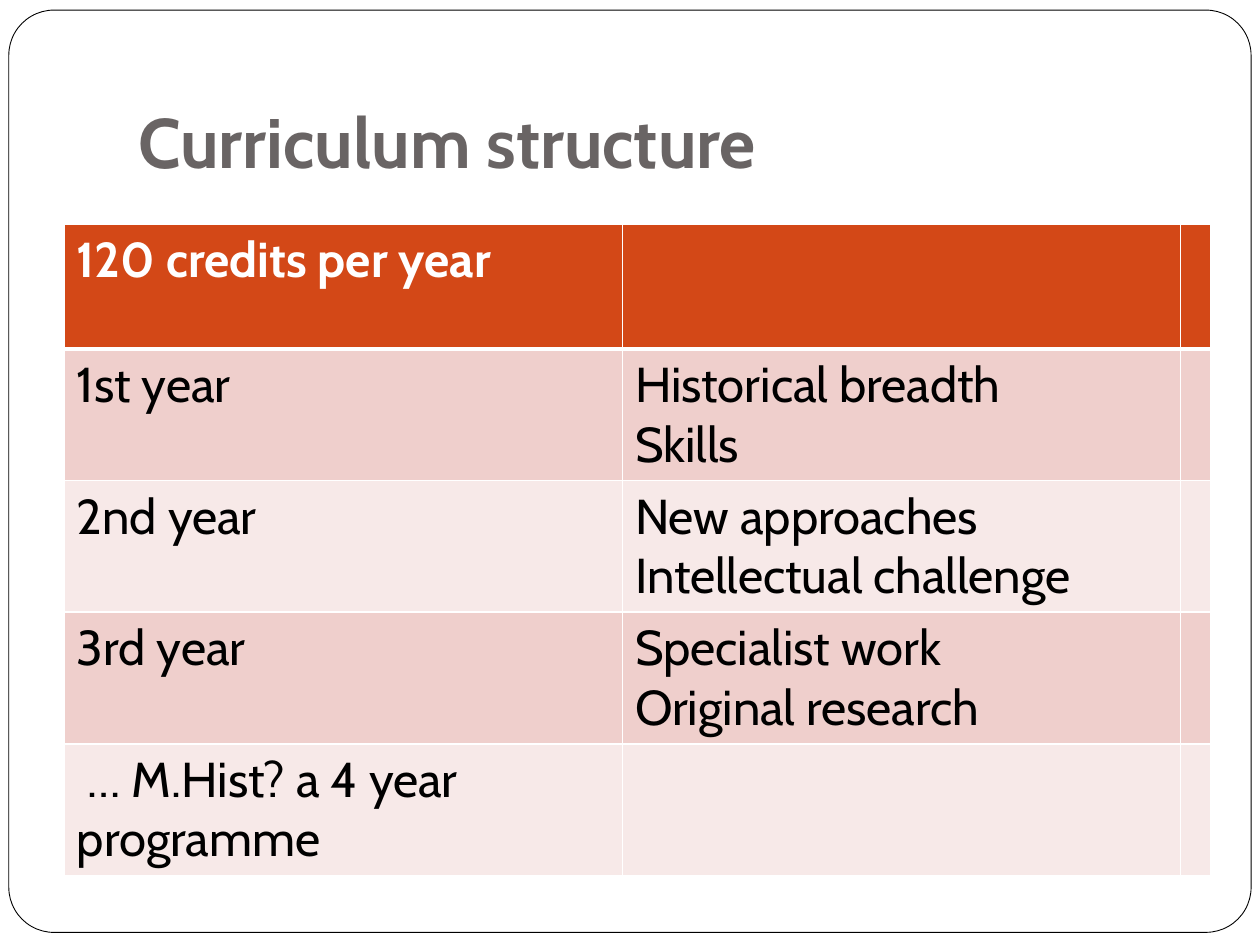
from lxml import etree
from pptx import Presentation, util as u
from pptx.dml.color import RGBColor
from pptx.enum import shapes, text
from pptx.oxml.ns import qn

FONT = "Cabin"
WIDTH, HEIGHT = 10, 7.5
COLUMNS = (4.43, 4.43, 0.23)
ROWS = (0.99, 1.04, 1.04, 1.04, 1.04)
HEADER_FILL = "D34817"
BAND_FILLS = ("F7E9E8", "EFCFCC")
CONTENT = (
    ("120 credits per year", "", ""),
    ("1st year", "Historical breadth\nSkills", ""),
    ("2nd year", "New approaches\nIntellectual challenge", ""),
    ("3rd year", "Specialist work\nOriginal research", ""),
    (" … M.Hist? a 4 year programme", "", ""),
)


def color(value):
    return RGBColor.from_string(value)


def format_text(frame, size, value, bold):
    for para in frame.paragraphs:
        para.alignment = text.PP_ALIGN.LEFT
        for span in para.runs:
            span.font.name = FONT
            span.font.size = u.Pt(size)
            span.font.bold = bold
            span.font.color.rgb = color(value)


def add_title(page, words):
    title = page.shapes.title
    title.left, title.top = u.Inches(0.1 * WIDTH), u.Inches(0.04 * HEIGHT)
    title.width, title.height = u.Inches(0.85 * WIDTH), u.Inches(1.25)
    frame = title.text_frame
    frame.text = words
    frame.auto_size = text.MSO_AUTO_SIZE.NONE
    frame.vertical_anchor = text.MSO_ANCHOR.BOTTOM
    frame.margin_bottom = u.Inches(0.1)
    format_text(frame, 40, "696464", True)


def add_frame(page):
    box = page.shapes.add_shape(
        shapes.MSO_SHAPE.ROUNDED_RECTANGLE,
        u.Inches(0.07), u.Inches(0.08), u.Inches(9.86), u.Inches(7.32))
    box.adjustments[0] = 0.049
    box.shadow.inherit = False
    box.fill.solid()
    box.fill.fore_color.rgb = color("FFFFFF")
    box.line.color.rgb = color("000000")
    box.line.width = u.Pt(0.5)
    page.shapes.title.element.addprevious(box.element)


def add_border(cell, side, points):
    properties = cell._tc.get_or_add_tcPr()
    line = etree.SubElement(properties, qn(f"a:ln{side}"), w=str(u.Pt(points)))
    fill = etree.SubElement(line, qn("a:solidFill"))
    etree.SubElement(fill, qn("a:srgbClr"), val="FFFFFF")


def format_cell(cell, words, row):
    header = row == 0
    widths = {"L": 1, "R": 1, "T": 3 if row == 1 else 1, "B": 3 if header else 1}
    for side, points in widths.items():
        add_border(cell, side, points)
    cell.fill.solid()
    cell.fill.fore_color.rgb = color(HEADER_FILL if header else BAND_FILLS[row % 2])
    if words:
        cell.text_frame.text = words
        format_text(cell.text_frame, 28, "FFFFFF" if header else "000000", header)


def add_curriculum(page):
    table = page.shapes.add_table(
        len(ROWS), len(COLUMNS), u.Inches(0.51), u.Inches(1.78),
        u.Inches(sum(COLUMNS)), u.Inches(sum(ROWS))).table
    for column, width in zip(table.columns, COLUMNS):
        column.width = u.Inches(width)
    for row, height in zip(table.rows, ROWS):
        row.height = u.Inches(height)
    for row, entries in enumerate(CONTENT):
        for column, words in enumerate(entries):
            format_cell(table.cell(row, column), words, row)


def main():
    deck = Presentation()
    deck.slide_width, deck.slide_height = u.Inches(WIDTH), u.Inches(HEIGHT)
    page = deck.slides.add_slide(deck.slide_layouts[5])
    add_frame(page)
    add_title(page, "Curriculum structure")
    add_curriculum(page)
    deck.save("out.pptx")


if __name__ == "__main__":
    main()
